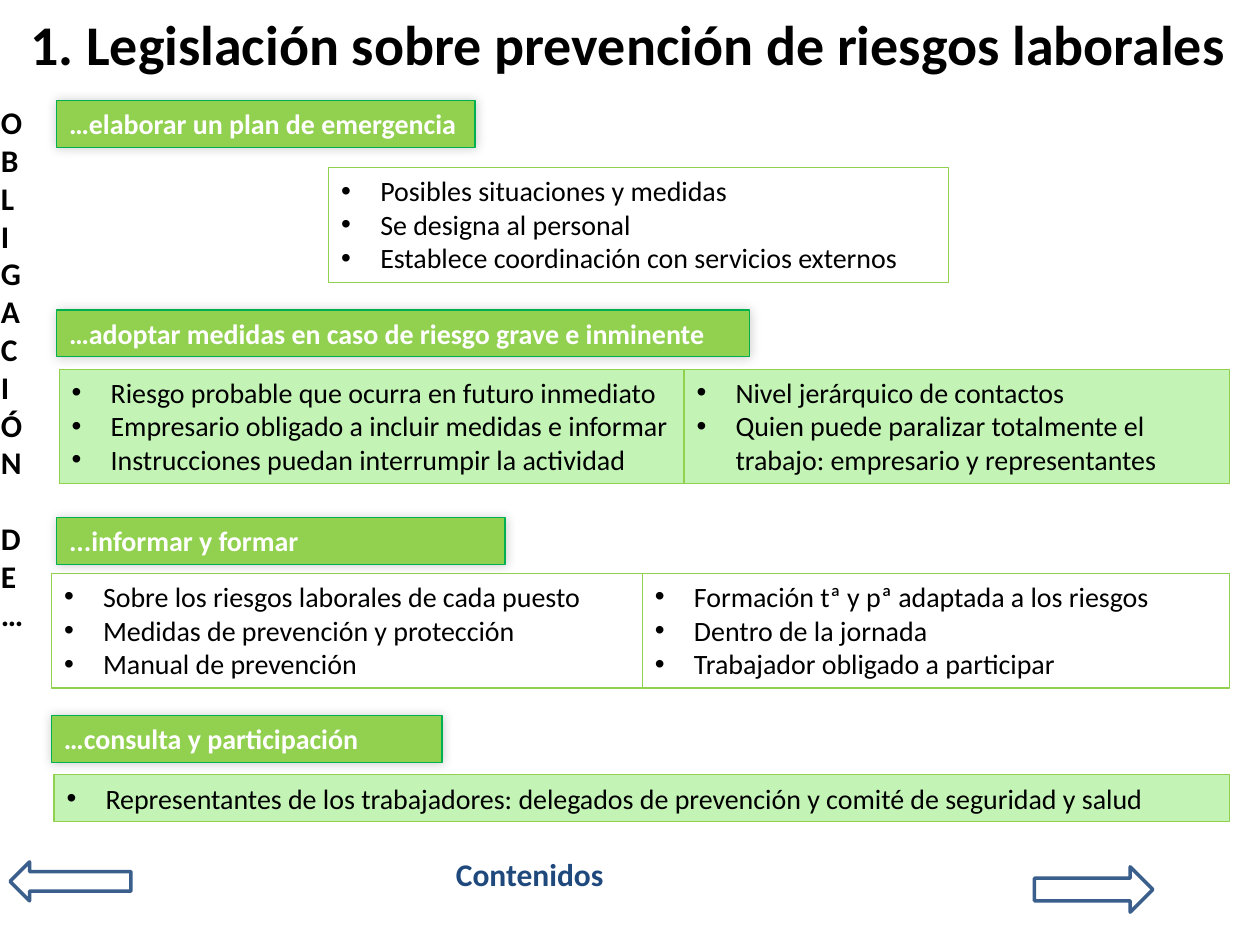
from lxml.etree import SubElement
from pptx import Presentation
from pptx.dml.color import RGBColor
from pptx.enum.shapes import MSO_SHAPE
from pptx.enum.text import MSO_ANCHOR, PP_ALIGN
from pptx.oxml.ns import qn
from pptx.util import Inches, Pt

BLACK = RGBColor(0x00, 0x00, 0x00)
WHITE = RGBColor(0xFF, 0xFF, 0xFF)
NAVY = RGBColor(0x1F, 0x49, 0x7D)
ARROW_BLUE = RGBColor(0x3A, 0x5F, 0x8C)
LIME = RGBColor(0x92, 0xD0, 0x50)
GREEN = RGBColor(0x00, 0xB0, 0x50)
PALE_GREEN = RGBColor(0xC3, 0xF4, 0xB6)

TITLE = "1. Legislación sobre prevención de riesgos laborales"
SIDE_LABEL = "OBLIGACIÓN DE…"
CONTENTS_LINK = "Contenidos"
HEADING_HEIGHT = 0.37
LINE_HEIGHT = 0.27
BOX_PADDING = 0.1
RIGHT_EDGE = 9.76

# Each heading: left, top, width; its panels: left, right edge, lines
SECTIONS = [
    {"heading": "…elaborar un plan de emergencia", "at": (0.45, 0.8, 3.32),
     "panel_top": 1.33, "fill": None, "rows": 3,
     "panels": [(2.61, 7.53, ["Posibles situaciones y medidas",
                              "Se designa al personal",
                              "Establece coordinación con servicios externos"])]},
    {"heading": "…adoptar medidas en caso de riesgo grave e inminente",
     "at": (0.45, 2.46, 5.5),
     "panel_top": 2.93, "fill": PALE_GREEN, "rows": 3,
     "panels": [(0.47, 5.46, ["Riesgo probable que ocurra en futuro inmediato",
                              "Empresario obligado a incluir medidas e informar",
                              "Instrucciones puedan interrumpir la actividad"]),
                (5.43, RIGHT_EDGE, ["Nivel jerárquico de contactos",
                                    "Quien puede paralizar totalmente el trabajo: "
                                    "empresario y representantes"])]},
    {"heading": "...informar y formar", "at": (0.45, 4.11, 3.56),
     "panel_top": 4.55, "fill": None, "rows": 3,
     "panels": [(0.41, 5.1, ["Sobre los riesgos laborales de cada puesto",
                             "Medidas de prevención y protección",
                             "Manual de prevención"]),
                (5.1, RIGHT_EDGE, ["Formación tª y pª adaptada a los riesgos",
                                   "Dentro de la jornada",
                                   "Trabajador obligado a participar"])]},
    {"heading": "…consulta y participación", "at": (0.41, 5.68, 3.1),
     "panel_top": 6.15, "fill": PALE_GREEN, "rows": 1,
     "panels": [(0.43, RIGHT_EDGE, ["Representantes de los trabajadores: delegados de "
                                    "prevención y comité de seguridad y salud"])]},
]
ARROWS = [
    (MSO_SHAPE.LEFT_ARROW, (0.08, 6.84, 0.96, 0.31)),
    (MSO_SHAPE.RIGHT_ARROW, (8.21, 6.88, 0.94, 0.36)),
]

HEADING_FONT = {"size": Pt(16), "bold": True, "color": WHITE}
PANEL_FONT = {"size": Pt(16), "bold": False, "color": BLACK}
TITLE_FONT = {"size": Pt(32), "bold": True, "color": BLACK}
SIDE_FONT = {"size": Pt(18), "bold": True, "color": BLACK}
LINK_FONT = {"size": Pt(18), "bold": True, "color": NAVY}


def add_bullet(paragraph):
    properties = paragraph._p.get_or_add_pPr()
    properties.set("marL", str(Inches(0.31)))
    properties.set("indent", str(Inches(-0.31)))
    SubElement(properties, qn("a:buFont")).set("typeface", "Arial")
    SubElement(properties, qn("a:buChar")).set("char", "•")


def write(frame, lines, font_format, anchor=MSO_ANCHOR.TOP, bulleted=False):
    frame.word_wrap = True
    frame.vertical_anchor = anchor
    for index, line in enumerate(lines):
        paragraph = frame.add_paragraph() if index else frame.paragraphs[0]
        paragraph.text = line
        paragraph.alignment = PP_ALIGN.LEFT
        if bulleted:
            add_bullet(paragraph)
        font = paragraph.font
        font.name = "Calibri"
        for name, value in font_format.items():
            if name == "color":
                font.color.rgb = value
            else:
                setattr(font, name, value)


def add_outlined(slide, preset, place, fill, line, line_width):
    shape = slide.shapes.add_shape(preset, *map(Inches, place))
    if fill is None:
        shape.fill.background()
    else:
        shape.fill.solid()
        shape.fill.fore_color.rgb = fill
    shape.line.color.rgb = line
    shape.line.width = Pt(line_width)
    shape.shadow.inherit = False
    return shape


def add_glow_shadow(shape):
    """Give the shape a soft black shadow with no offset."""
    effects = shape._element.spPr.find(qn("a:effectLst"))
    shadow = SubElement(effects, qn("a:outerShdw"), blurRad=str(Pt(6)), dist="0",
                        dir=str(225 * 60000), rotWithShape="0")
    color = SubElement(shadow, qn("a:srgbClr"), val="000000")
    SubElement(color, qn("a:alpha"), val="20000")


def add_section(slide, section):
    for left, right, lines in section["panels"]:
        height = section["rows"] * LINE_HEIGHT + BOX_PADDING
        panel = add_outlined(slide, MSO_SHAPE.RECTANGLE,
                             (left, section["panel_top"], right - left, height),
                             section["fill"], LIME, 0.75)
        write(panel.text_frame, lines, PANEL_FONT, bulleted=True)
    heading = add_outlined(slide, MSO_SHAPE.RECTANGLE,
                           (*section["at"], HEADING_HEIGHT), LIME, GREEN, 0.75)
    add_glow_shadow(heading)
    write(heading.text_frame, [section["heading"]], HEADING_FONT)


def main():
    presentation = Presentation()
    presentation.slide_width, presentation.slide_height = Inches(10), Inches(7.5)
    slide = presentation.slides.add_slide(presentation.slide_layouts[5])

    title = slide.shapes.title
    title.left, title.top, title.width, title.height = map(Inches, (0.14, 0.03, 9.86, 0.63))
    write(title.text_frame, [TITLE], TITLE_FONT, anchor=MSO_ANCHOR.MIDDLE)

    link = slide.shapes.add_textbox(*map(Inches, (3.52, 6.74, 1.44, 0.4)))
    write(link.text_frame, [CONTENTS_LINK], LINK_FONT)

    for preset, place in ARROWS:
        add_outlined(slide, preset, place, None, ARROW_BLUE, 2)

    side = slide.shapes.add_textbox(*map(Inches, (-0.09, 0.77, 0.56, 5.69)))
    write(side.text_frame, [SIDE_LABEL], SIDE_FONT)
    side.text_frame._txBody.bodyPr.set("vert", "wordArtVert")

    for section in SECTIONS:
        add_section(slide, section)

    presentation.save("out.pptx")


if __name__ == "__main__":
    main()
